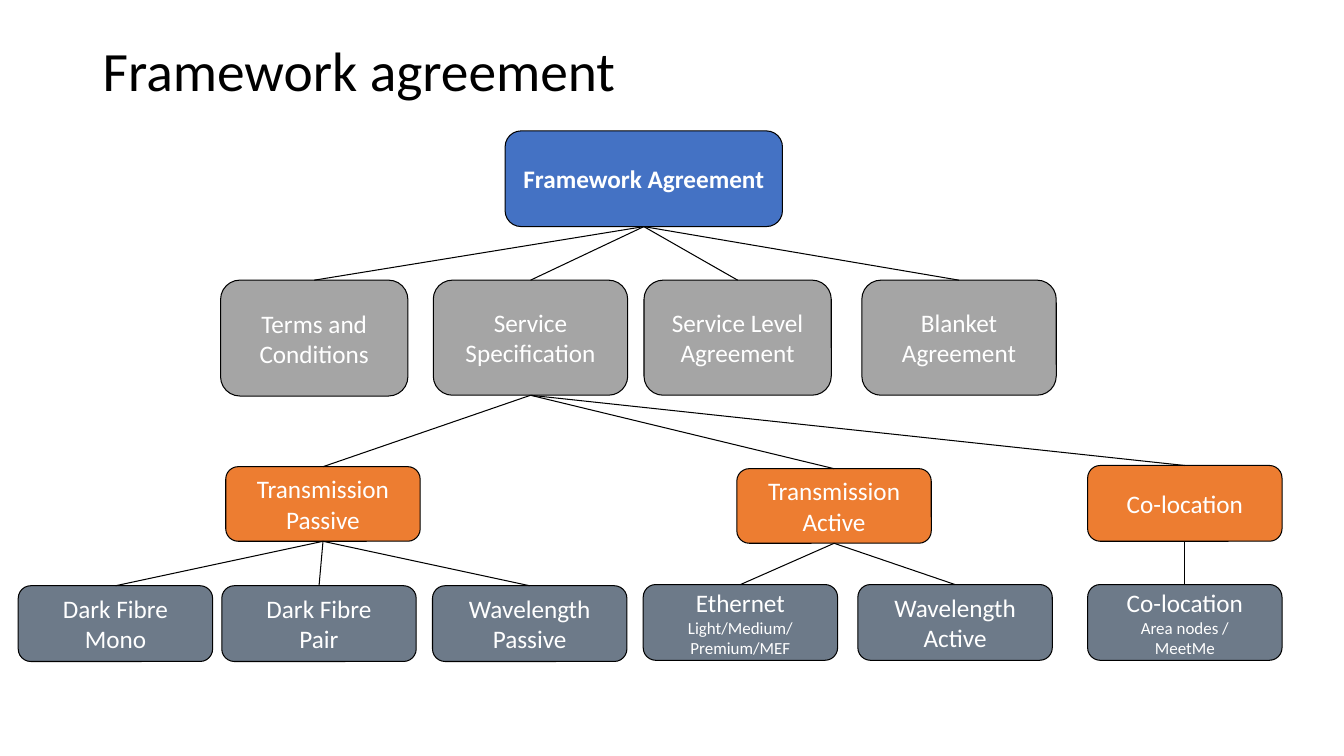
from lxml import etree
from pptx import Presentation
from pptx.dml.color import RGBColor
from pptx.enum.shapes import MSO_CONNECTOR, MSO_SHAPE
from pptx.enum.text import MSO_ANCHOR as Anchor, PP_ALIGN as Align
from pptx.oxml.ns import qn
from pptx.util import Cm, Pt

FONT = "Calibri"
COLOURS = {
    "agreement": "4472C4",
    "document": "A5A5A5",
    "service": "ED7D31",
    "product": "6D7A89",
    "ink": "000000",
    "paper": "FFFFFF",
}
TOP_SITE, BOTTOM_SITE = 0, 2
BODY, DETAIL = 18, 12.1

# key: (parent, level, left, top, width, height in cm, paragraphs)
# Line breaks inside a paragraph mark the small detail text.
NODES = {
    "framework": (None, "agreement", 12.73, 3.3, 6.99, 2.41, ["Framework Agreement"]),
    "terms": ("framework", "document", 5.56, 7.06, 4.72, 2.92, ["Terms and Conditions"]),
    "specification": ("framework", "document", 10.92, 7.06, 4.9, 2.9, ["Service Specification"]),
    "level": ("framework", "document", 16.23, 7.06, 4.72, 2.9, ["Service Level Agreement"]),
    "blanket": ("framework", "document", 21.72, 7.06, 4.9, 2.9, ["Blanket", "Agreement"]),
    "passive": ("specification", "service", 5.69, 11.76, 4.9, 1.88, ["Transmission", "Passive"]),
    "active": ("specification", "service", 18.57, 11.81, 4.9, 1.88, ["Transmission", "Active"]),
    "colocation": ("specification", "service", 27.41, 11.73, 4.9, 1.91, ["Co-location"]),
    "mono": ("passive", "product", 0.46, 14.76, 4.9, 1.91, ["Dark Fibre", "Mono"]),
    "pair": ("passive", "product", 5.59, 14.76, 4.9, 1.91, ["Dark Fibre", "Pair"]),
    "wave_passive": ("passive", "product", 10.9, 14.76, 4.9, 1.91, ["Wavelength", "Passive"]),
    "ethernet": ("active", "product", 16.21, 14.73, 4.9, 1.91,
                 ["Ethernet", "Light/Medium/\nPremium/MEF"]),
    "wave_active": ("active", "product", 21.62, 14.73, 4.9, 1.91, ["Wavelength", "Active"]),
    "area": ("colocation", "product", 27.41, 14.73, 4.9, 1.91,
             ["Co-location", "Area nodes /\nMeetMe"]),
}


def colour(name):
    return RGBColor.from_string(COLOURS[name])


def add_span(para, text, size, ink, bold=False):
    span = para.add_run()
    span.text = text
    span.font.name = FONT
    span.font.size = Pt(size)
    span.font.bold = bold
    span.font.color.rgb = colour(ink)


def set_outline(line):
    line.color.rgb = colour("ink")
    line.width = Pt(0.75)


def add_title(page, text):
    box = page.shapes.add_textbox(Cm(2.34), Cm(1.02), Cm(29.2), Cm(1.75))
    frame = box.text_frame
    frame.word_wrap = True
    frame.vertical_anchor = Anchor.MIDDLE
    para = frame.paragraphs[0]
    para.line_spacing = 0.8
    add_span(para, text, 39.6, "ink")


def add_node(page, level, left, top, width, height, paragraphs):
    box = page.shapes.add_shape(MSO_SHAPE.ROUNDED_RECTANGLE,
                                Cm(left), Cm(top), Cm(width), Cm(height))
    box.shadow.inherit = False
    box.fill.solid()
    box.fill.fore_color.rgb = colour(level)
    set_outline(box.line)
    frame = box.text_frame
    frame.word_wrap = True
    frame.vertical_anchor = Anchor.MIDDLE
    for index, text in enumerate(paragraphs):
        para = frame.add_paragraph() if index else frame.paragraphs[0]
        para.alignment = Align.CENTER
        lines = text.split("\n")
        size = DETAIL if len(lines) > 1 else BODY
        for number, words in enumerate(lines):
            if number:
                para.add_line_break()
            add_span(para, words, size, "paper", bold=level == "agreement")
    return box


def add_branch(page, parent, child):
    branch = page.shapes.add_connector(MSO_CONNECTOR.STRAIGHT, 0, 0, 0, 0)
    branch.begin_connect(parent, BOTTOM_SITE)
    branch.end_connect(child, TOP_SITE)
    set_outline(branch.line)
    etree.SubElement(branch._element.spPr, qn("a:effectLst"))


def main():
    deck = Presentation()
    deck.slide_width, deck.slide_height = Cm(33.87), Cm(19.05)
    page = deck.slides.add_slide(deck.slide_layouts[6])
    add_title(page, "Framework agreement")
    boxes = {}
    for key, (parent, *details) in NODES.items():
        boxes[key] = add_node(page, *details)
        if parent:
            add_branch(page, boxes[parent], boxes[key])
    deck.save("out.pptx")


if __name__ == "__main__":
    main()
